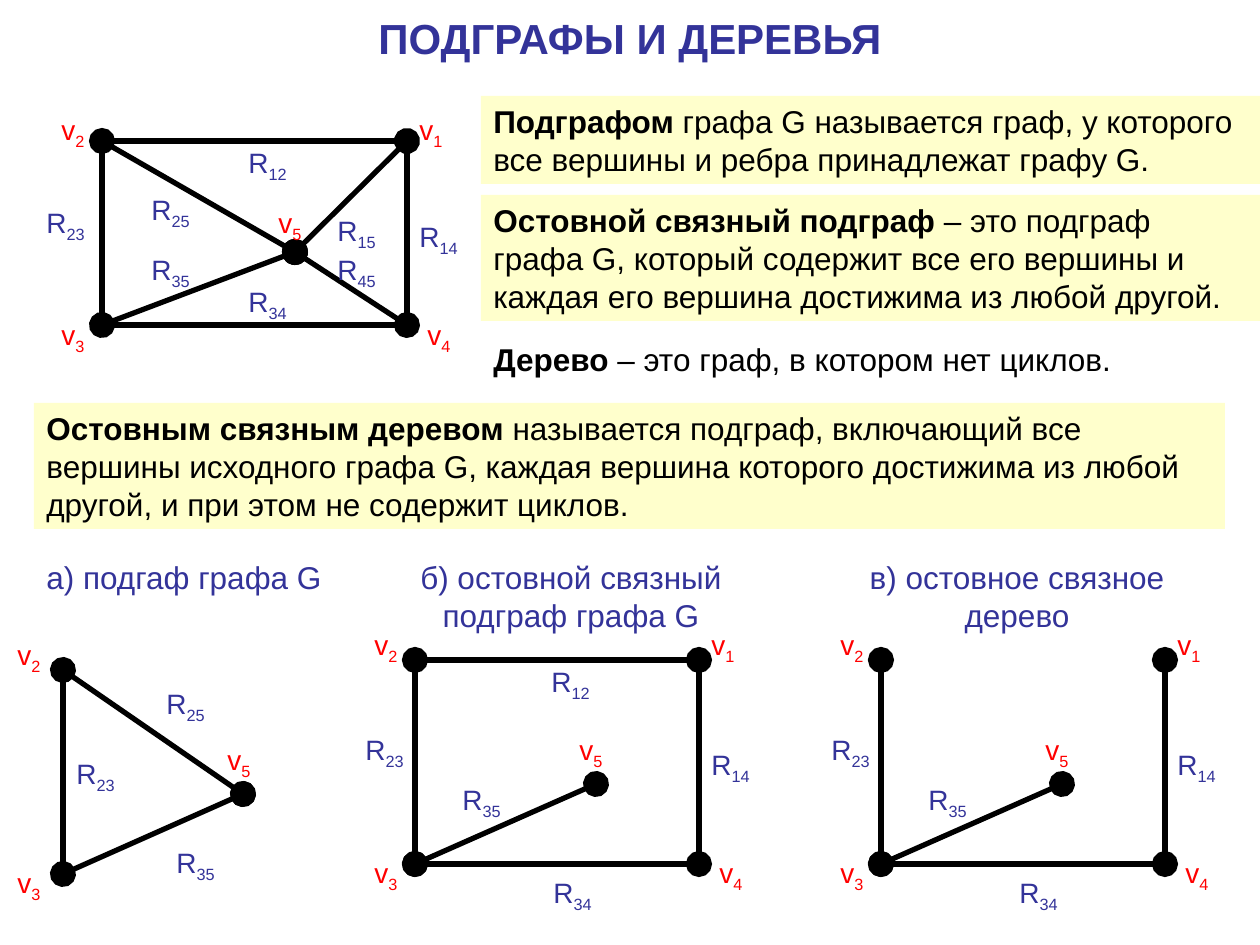
from lxml import etree
from pptx import Presentation
from pptx import util as u
from pptx.dml.color import RGBColor
from pptx.enum import shapes, text
from pptx.oxml import ns

PX = u.Inches(1) / 126
INK, BLUE, RED, CREAM, WHITE = "000000", "333399", "FF0000", "FFFFCC", "FFFFFF"


def px(*lengths):
    return [u.Emu(round(length * PX)) for length in lengths]


def write(box, paragraphs, size, color, align="LEFT", anchor="TOP", wrap=True):
    """Each paragraph is a list of (words, format) pairs."""
    frame = box.text_frame
    frame.word_wrap = wrap
    frame.vertical_anchor = getattr(text.MSO_ANCHOR, anchor)
    for number, spans in enumerate(paragraphs):
        para = frame.add_paragraph() if number else frame.paragraphs[0]
        para.alignment = getattr(text.PP_ALIGN, align)
        for words, look in spans:
            span = para.add_run()
            span.text = words
            span.font.color.rgb = RGBColor.from_string(color)
            values = {"name": "Arial", "size": u.Pt(size), "bold": "bold" in look}
            for name, value in values.items():
                setattr(span.font, name, value)
            if "sub" in look:
                span.font._element.set("baseline", "-25000")


deck = Presentation()
deck.slide_width, deck.slide_height = px(1260, 945)
page = deck.slides.add_slide(deck.slide_layouts[6])

# Graphs: vertex centres, label corners, edges whose ends carry dots
whole = {
    "nodes": {"1": (407, 141), "2": (102, 141), "3": (102, 325),
              "4": (407, 325), "5": (295, 252)},
    "names": {"1": (407, 106), "2": (49, 106), "3": (49, 311),
              "4": (415, 311), "5": (266, 199)},
    "edges": {"23": (34, 199), "14": (407, 213), "45": (325, 246), "15": (325, 207),
              "12": (236, 139), "34": (236, 278), "35": (139, 246), "25": (139, 186)},
    "dotted": ["45", "15", "35", "25"], "shift": 0, "widths": (59, 74),
}
subgraph = {
    "nodes": {"2": (63, 670), "3": (63, 874), "5": (243, 794)},
    "names": {"2": (5, 631), "3": (5, 859), "5": (215, 736)},
    "edges": {"23": (64, 750), "35": (164, 839), "25": (154, 680)},
    "dotted": ["35", "25"], "shift": 0, "widths": (55, 69),
}
spanning = {
    "nodes": {"1": (699, 660), "2": (415, 660), "3": (415, 864),
              "4": (699, 864), "5": (596, 784)},
    "names": {"1": (699, 621), "2": (362, 621), "3": (362, 849),
              "4": (707, 849), "5": (567, 726)},
    "edges": {"23": (353, 726), "14": (699, 741), "12": (539, 658),
              "34": (541, 869), "35": (450, 776)},
    "dotted": ["12", "34", "35"], "shift": 0, "widths": (55, 69),
}
# The tree is the spanning subgraph moved right, without the edge that closes the cycle
tree = {
    **spanning,
    "edges": {key: spot for key, spot in spanning["edges"].items() if key != "12"},
    "dotted": ["23", "14", "35"], "shift": 466,
}

for graph in (whole, subgraph, spanning, tree):
    shift = graph["shift"]
    for key in graph["edges"]:
        (x1, y1), (x2, y2) = graph["nodes"][key[1]], graph["nodes"][key[0]]
        edge = page.shapes.add_connector(
            shapes.MSO_CONNECTOR.STRAIGHT, *px(x1 + shift, y1, x2 + shift, y2))
        edge.line.width = u.Pt(3)
        edge.line.color.rgb = RGBColor.from_string(INK)
        if key in graph["dotted"]:
            for end in ("a:headEnd", "a:tailEnd"):
                etree.SubElement(edge.line._get_or_add_ln(), ns.qn(end),
                                 type="oval", w="lg", len="lg")
        etree.SubElement(edge._element.spPr, ns.qn("a:effectLst"))
    kinds = zip(("v", "R"), ("names", "edges"), (RED, BLUE), graph["widths"])
    for letter, group, color, width in kinds:
        for index, (x, y) in graph[group].items():
            box = page.shapes.add_textbox(*px(x + shift, y, width, 47))
            write(box, [[(letter, ""), (index, "sub")]], 16, color)

# Title bar and definitions
title = [("ПОДГРАФЫ И ДЕРЕВЬЯ", "bold")]
bars = [
    ((0, 0, 1260, 76), WHITE, title, (24, BLUE, "CENTER", "MIDDLE", False)),
    ((481, 96, 779, 88), CREAM, [
        ("Подграфом", "bold"),
        (" графа G называется граф, у которого все вершины и ребра "
         "принадлежат графу G.", "")], (18, INK)),
    ((481, 195, 779, 126), CREAM, [
        ("Остовной связный подграф ", "bold"),
        ("– это подграф графа G, который содержит все его вершины и "
         "каждая его вершина достижима из любой другой.", "")], (18, INK)),
    ((481, 334, 779, 50), WHITE, [
        ("Дерево", "bold"), (" – это граф, в котором нет циклов.", "")], (18, INK)),
    ((34, 403, 1191, 126), CREAM, [
        ("Остовным связным деревом ", "bold"),
        ("называется подграф, включающий все вершины исходного графа G, "
         "каждая вершина которого достижима из любой другой, и при этом "
         "не содержит циклов.", "")], (18, INK)),
]
for place, fill, spans, style in bars:
    bar = page.shapes.add_shape(shapes.MSO_SHAPE.RECTANGLE, *px(*place))
    bar.shadow.inherit = False
    bar.fill.solid()
    bar.fill.fore_color.rgb = RGBColor.from_string(fill)
    bar.line.fill.background()
    write(bar, [spans], *style)

# Captions of the three lower graphs
captions = [
    ((34, 552, 318, 50), "LEFT", ["а) подгаф графа G"]),
    ((402, 552, 338, 88), "CENTER", ["б) остовной связный", "подграф графа G"]),
    ((848, 552, 338, 88), "CENTER", ["в) остовное связное", "дерево"]),
]
for place, align, lines in captions:
    box = page.shapes.add_textbox(*px(*place))
    write(box, [[(line, "")] for line in lines], 18, BLUE, align)

deck.save("out.pptx")
